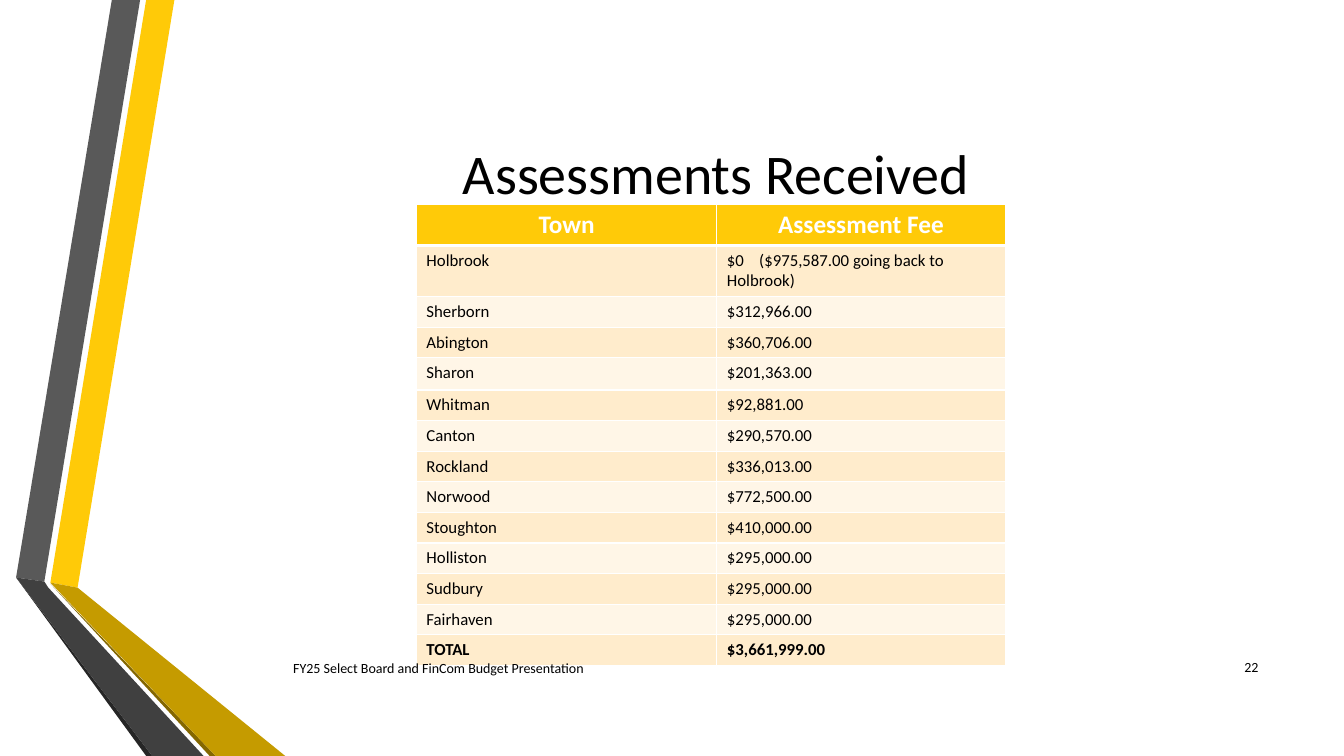
from pptx import Presentation, util as u
from pptx.dml.color import RGBColor
from pptx.enum import text
from pptx.oxml import parse_xml
from pptx.oxml.ns import nsdecls

TITLE = "Assessments Received"
FOOTER = "FY25 Select Board and FinCom Budget Presentation"
NUMBER = "22"
ROWS = [
    ("Town", "Assessment Fee"),
    ("Holbrook", "$0\t($975,587.00 going back to Holbrook)"),
    ("Sherborn", "$312,966.00"),
    ("Abington", "$360,706.00"),
    ("Sharon", "$201,363.00"),
    ("Whitman", "$92,881.00"),
    ("Canton", "$290,570.00"),
    ("Rockland", "$336,013.00"),
    ("Norwood", "$772,500.00"),
    ("Stoughton", "$410,000.00"),
    ("Holliston", "$295,000.00"),
    ("Sudbury", "$295,000.00"),
    ("Fairhaven", "$295,000.00"),
    ("TOTAL", "$3,661,999.00"),
]
BANDS = [
    ("gold", [(0.5, 5.78), (0.77, 5.83), (1.73, 0), (1.45, 0)]),
    ("gray", [(1.39, 0), (1.11, 0), (0.16, 5.73), (0.44, 5.77)]),
    ("black", [(0.16, 5.73), (1.45, 7.5), (1.51, 7.5)]),
    ("brown", [(0.5, 5.79), (2.08, 7.5), (2.14, 7.5)]),
    ("ochre", [(0.5, 5.78), (2.14, 7.5), (2.83, 7.5), (0.77, 5.83)]),
    ("dark", [(2.02, 7.5), (0.48, 5.83), (0.44, 5.77), (0.16, 5.73), (1.51, 7.5)]),
]
THEME = {
    "font": "Calibri",
    "size": {"title": 40, "head": 18, "body": 12, "foot": 10},
    "color": {
        "gold": "FFCA08", "gray": "595959", "black": "262626", "brown": "846700",
        "ochre": "C59B00", "dark": "404040", "text": "000000", "white": "FFFFFF",
        "odd": "FFECCC", "even": "FFF6E7",
    },
}
COLS = (2.98, 2.86)
HEIGHTS = {0: 0.39, 1: 0.5, 4: 0.32}
LEFT, CENTER, RIGHT = text.PP_ALIGN.LEFT, text.PP_ALIGN.CENTER, text.PP_ALIGN.RIGHT


def color(name):
    return RGBColor.from_string(THEME["color"][name])


def write(frame, words, size, align=LEFT, ink="text", bold=False):
    frame.text = words
    line = frame.paragraphs[0]
    line.alignment = align
    font = line.font
    font.name, font.size, font.bold = THEME["font"], u.Pt(THEME["size"][size]), bold
    font.color.rgb = color(ink)
    return line


def place(shape, *box):
    shape.left, shape.top, shape.width, shape.height = map(u.Inches, box)


def label(slide, words, box, align=LEFT):
    frame = slide.shapes.add_textbox(*map(u.Inches, box)).text_frame
    frame.word_wrap = True
    frame.vertical_anchor = text.MSO_ANCHOR.MIDDLE
    write(frame, words, "foot", align)


def band(slide, fill, points):
    pen = slide.shapes.build_freeform(*map(u.Inches, points[0]))
    pen.add_line_segments([tuple(map(u.Inches, p)) for p in points[1:]])
    shape = pen.convert_to_shape()
    shape.shadow.inherit = False
    shape.fill.solid()
    shape.fill.fore_color.rgb = color(fill)
    shape.line.fill.background()


def border(cell, row):
    widths = {"L": 1, "R": 1, "T": 3 if row == 1 else 1, "B": 3 if row == 0 else 1}
    props = cell._tc.get_or_add_tcPr()
    for i, (side, width) in enumerate(widths.items()):
        props.insert(i, parse_xml(
            f'<a:ln{side} {nsdecls("a")} w="{u.Pt(width)}"><a:solidFill>'
            f'<a:srgbClr val="{THEME["color"]["white"]}"/></a:solidFill></a:ln{side}>'))


def tab(line, stop):
    line._p.get_or_add_pPr().insert(0, parse_xml(
        f'<a:tabLst {nsdecls("a")}><a:tab pos="{u.Inches(stop)}" algn="l"/></a:tabLst>'))


def grid(slide):
    tall = [HEIGHTS.get(i, 0.3) for i in range(len(ROWS))]
    box = map(u.Inches, (4.13, 2.03, sum(COLS), sum(tall)))
    table = slide.shapes.add_table(len(ROWS), len(COLS), *box).table
    for col, width in zip(table.columns, COLS):
        col.width = u.Inches(width)
    for r, row in enumerate(ROWS):
        table.rows[r].height = u.Inches(tall[r])
        head = r == 0
        fill = "gold" if head else ("even", "odd")[r % 2]
        for c, words in enumerate(row):
            cell = table.cell(r, c)
            cell.fill.solid()
            cell.fill.fore_color.rgb = color(fill)
            border(cell, r)
            line = write(cell.text_frame, words, "head" if head else "body",
                         CENTER if head else LEFT, "white" if head else "text",
                         r in (0, len(ROWS) - 1))
            if "\t" in words:
                tab(line, 0.32)


def main():
    deck = Presentation()
    deck.slide_width, deck.slide_height = u.Inches(13.33), u.Inches(7.5)
    slide = deck.slides.add_slide(deck.slide_layouts[5])
    for fill, points in BANDS:
        band(slide, fill, points)
    title = slide.shapes.title
    place(title, 1.62, 0.75, 10.96, 1.92)
    title.text_frame.vertical_anchor = text.MSO_ANCHOR.MIDDLE
    write(title.text_frame, TITLE, "title", CENTER)
    grid(slide)
    label(slide, FOOTER, (2.81, 6.43, 7.75, 0.4))
    label(slide, NUMBER, (11.98, 6.42, 0.6, 0.4), RIGHT)
    deck.save("out.pptx")


if __name__ == "__main__":
    main()
